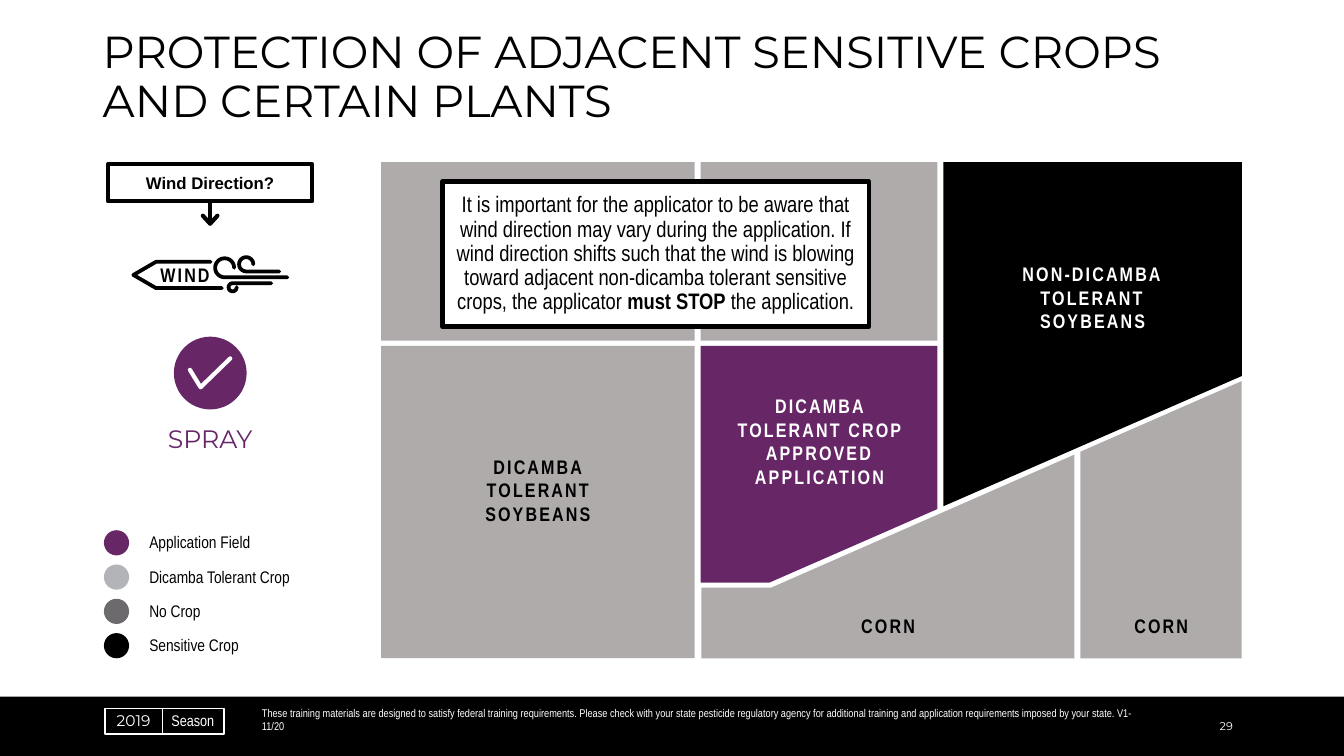
import math
from pptx import Presentation
from pptx import util as u
from pptx.dml.color import RGBColor
from pptx.enum import shapes, text
from pptx.oxml.ns import qn
from lxml import etree

# ---- Content (all lengths in points) ----
BLACK, WHITE, PURPLE, GREY = "000000", "FFFFFF", "672767", "AFABAB"
NARROW, DISPLAY = "Arial Narrow", "Montserrat"

TITLE = "PROTECTION OF ADJACENT SENSITIVE CROPS AND CERTAIN PLANTS"
NOTICE = ("It is important for the applicator to be aware that wind direction may vary "
          "during the application. If wind direction shifts such that the wind is blowing "
          "toward adjacent non-dicamba tolerant sensitive crops, the applicator "
          "**must STOP** the application.")
DISCLAIMER = ("These training materials are designed to satisfy federal training requirements. "
              "Please check with your state pesticide regulatory agency for additional training "
              "and application requirements imposed by your state. V1-11/20")
LEGEND = [("Application Field", PURPLE), ("Dicamba Tolerant Crop", "B2B4B7"),
          ("No Crop", "6C6A6D"), ("Sensitive Crop", BLACK)]

# Edges of the field map
LEFT, LEFT_END, MID, MID_END, RIGHT, RIGHT_END = 272.2, 496.1, 500.4, 669.6, 673.9, 887
TOP, TOP_END, LOW, LOW_END = 115.9, 243.4, 247, 470.2
RECT_FIELDS = [(LEFT, TOP, LEFT_END, TOP_END), (MID, TOP, MID_END, TOP_END),
               (LEFT, LOW, LEFT_END, LOW_END)]
CUT_FIELDS = [
    (BLACK, [(RIGHT, 361.6), (RIGHT_END, 268.6), (RIGHT_END, TOP), (RIGHT, TOP)]),
    (GREY, [(767.5, 324.7), (550.8, 419.8), (501, 419.8), (501, LOW_END), (767.5, LOW_END)]),
    (GREY, [(771.8, 322.6), (771.8, LOW_END), (RIGHT_END, LOW_END), (RIGHT_END, 272.2)]),
    (PURPLE, [(MID, LOW), (MID, 416.2), (549.4, 416.2), (MID_END, 363.6), (MID_END, LOW)]),
]
# Label text, colour, box
FIELD_LABELS = [
    (["CORN"], BLACK, (614.2, 438.5, 40.3, 17.3)),
    (["CORN"], BLACK, (809.3, 438.5, 40.3, 17.3)),
    (["DICAMBA", "TOLERANT", "SOYBEANS"], BLACK, (344.2, 324.7, 79.9, 51.1)),
    (["NON-DICAMBA\vTOLERANT\vSOYBEANS"], WHITE, (730.1, 187.2, 100.8, 51.1)),
    (["DICAMBA", "TOLERANT CROP", "APPROVED\vAPPLICATION"], WHITE, (524.2, 281.5, 122.4, 67.7)),
]
# Wind sign: arrow outline, then gusts as centre, radius, turn direction, tail end
WIND_ARROW = [(150.5, 187), (111.5, 187), (95.3, 196.4), (111.5, 205.8), (158.5, 205.8)]
GUSTS = [((160.5, 191.3), 6.8, -1, 205.3), ((175.9, 188.8), 5.1, -1, 199.5),
         ((166.2, 205.2), 2.9, 1, 193.8)]

deck = Presentation()
deck.slide_width, deck.slide_height = u.Pt(960), u.Pt(540)
page = deck.slides.add_slide(deck.slide_layouts[5])


# ---- Helpers ----
def color(value):
    return RGBColor.from_string(value)


def pts(values):
    return [u.Pt(value) for value in values]


def paint(shape, fill=None, line=None, width=1):
    shape.shadow.inherit = False
    if fill:
        shape.fill.solid()
        shape.fill.fore_color.rgb = color(fill)
    else:
        shape.fill.background()
    if line:
        shape.line.color.rgb = color(line)
        shape.line.width = u.Pt(width)
    else:
        shape.line.fill.background()
    return shape


def add_preset(kind, box, **look):
    return paint(page.shapes.add_shape(kind, *pts(box)), **look)


def add_outline(points, closed=True, **look):
    builder = page.shapes.build_freeform(*pts(points[0]), scale=1.0)
    builder.add_line_segments([pts(point) for point in points[1:]], close=closed)
    return paint(builder.convert_to_shape(), **look)


def add_stroke(points, line, width):
    stroke = add_outline(points, closed=False, line=line, width=width)
    outline = stroke.element.spPr.find(qn("a:ln"))
    outline.set("cap", "rnd")
    etree.SubElement(outline, qn("a:round"))


def add_line(start, end, line, width):
    connector = page.shapes.add_connector(shapes.MSO_CONNECTOR.STRAIGHT, *pts(start + end))
    connector.line.color.rgb = color(line)
    connector.line.width = u.Pt(width)
    etree.SubElement(connector.element.spPr, qn("a:effectLst"))
    return connector


def write(shape, paragraphs, size=14, font=NARROW, ink=BLACK, bold=False, align="LEFT",
          anchor="TOP", insets=(0, 0, 0, 0), wrap=True, leading=None, tracking=0):
    """Fill a shape with text; ** toggles bold and \v breaks a line."""
    frame = shape.text_frame
    frame.auto_size = text.MSO_AUTO_SIZE.NONE
    frame.word_wrap = wrap
    frame.vertical_anchor = getattr(text.MSO_ANCHOR, anchor)
    (frame.margin_left, frame.margin_top,
     frame.margin_right, frame.margin_bottom) = pts(insets)
    for index, content in enumerate(paragraphs):
        para = frame.paragraphs[0] if index == 0 else frame.add_paragraph()
        para.alignment = getattr(text.PP_ALIGN, align)
        if leading:
            para.line_spacing = leading
        for row, line in enumerate(content.split("\v")):
            if row:
                para.add_line_break()
            for part, words in enumerate(line.split("**")):
                span = para.add_run()
                span.text = words
                span.font.size, span.font.name = u.Pt(size), font
                span.font.bold = bold or part % 2 == 1
                span.font.color.rgb = color(ink)
                if tracking:
                    span.font.element.set("spc", str(int(tracking * 100))) if hasattr(
                        span.font, "element") else span._r.get_or_add_rPr().set(
                        "spc", str(int(tracking * 100)))


def add_text(paragraphs, box, **style):
    write(page.shapes.add_textbox(*pts(box)), paragraphs, **style)


PADDED = (7.2, 3.6, 7.2, 3.6)
OVAL, RECT = shapes.MSO_SHAPE.OVAL, shapes.MSO_SHAPE.RECTANGLE

# ---- Title ----
title = page.shapes.title
title.left, title.top, title.width, title.height = pts((66.2, 18, 828, 85.7))
write(title, [TITLE], size=32, font=DISPLAY, insets=PADDED, leading=0.9)

# ---- Footer ----
add_preset(RECT, (0, 497.5, 960, 42.5), fill=BLACK)
add_preset(RECT, (74.9, 506.2, 85, 18), line=WHITE)
add_line((115.9, 506.2), (115.9, 524.2), WHITE, 1)
badge = dict(size=11, ink=WHITE, anchor="BOTTOM", leading=0.9, wrap=False)
add_text(["2019"], (76.3, 509, 38.2, 12.2), font=DISPLAY, align="CENTER", **badge)
add_text(["Season"], (122.4, 509, 34.6, 12.2), **badge)
small = dict(size=8, ink=WHITE, anchor="BOTTOM", insets=(7.2, 3.6, 7.2, 0))
add_text([DISCLAIMER], (180, 496.8, 651.6, 26.6), **small)
add_text(["29"], (851.8, 496.8, 36, 26.6), font=DISPLAY, align="RIGHT", **small)

# ---- Field map ----
for x1, y1, x2, y2 in RECT_FIELDS:
    add_preset(RECT, (x1, y1, x2 - x1, y2 - y1), fill=GREY)
for fill, corners in CUT_FIELDS:
    add_outline(corners, fill=fill)
label = dict(bold=True, align="CENTER", wrap=False, tracking=1.5)
for lines, ink, box in FIELD_LABELS:
    add_text(lines, box, ink=ink, **label)

# ---- Legend ----
for index, (name, fill) in enumerate(LEGEND):
    y = 378.7 + 24.5 * index
    add_preset(OVAL, (74.2, y, 18, 18), fill=fill)
    add_text([name], (106.6, y + 1.4, 101.5, 16.5), size=12, wrap=False)

# ---- Wind direction question and arrow ----
question = add_preset(RECT, (77.1, 117.4, 146, 26.4), line=BLACK, width=3)
write(question, ["Wind Direction?"], size=12, font="Arial", bold=True,
      align="CENTER", anchor="MIDDLE")
stem = add_line((150.1, 143.8), (150.1, 159), BLACK, 3.3)
stem.begin_connect(question, 2)
add_stroke([(144.9, 154.1), (150.1, 159.8), (155.3, 154.1)], BLACK, 3)

# ---- Wind sign ----
add_stroke(WIND_ARROW, BLACK, 2.7)
for (cx, cy), radius, turn, tail in GUSTS:
    angles = [math.radians(turn * step) for step in range(0, 271, 15)]
    curl = [(cx + radius * math.cos(a), cy + radius * math.sin(a)) for a in angles]
    add_stroke(curl + [(tail, curl[-1][1])], BLACK, 2.7)
add_text(["WIND"], (113.8, 187.9, 36.7, 17.3), **label)

# ---- Spray check mark ----
add_preset(OVAL, (124.2, 240.5, 52, 52), fill=PURPLE)
add_stroke([(135.7, 264.2), (143.3, 276.6), (164.5, 256)], WHITE, 3)
add_text(["SPRAY"], (69.8, 298.8, 160.6, 28.8), size=18, font=DISPLAY, ink=PURPLE,
         align="CENTER", insets=PADDED)

# ---- Notice over the map ----
notice = add_preset(RECT, (316.1, 129.6, 304.6, 103.7), fill=WHITE, line=BLACK, width=3)
write(notice, [NOTICE], size=16, align="CENTER", anchor="MIDDLE", insets=PADDED, leading=0.9)

deck.save("out.pptx")
